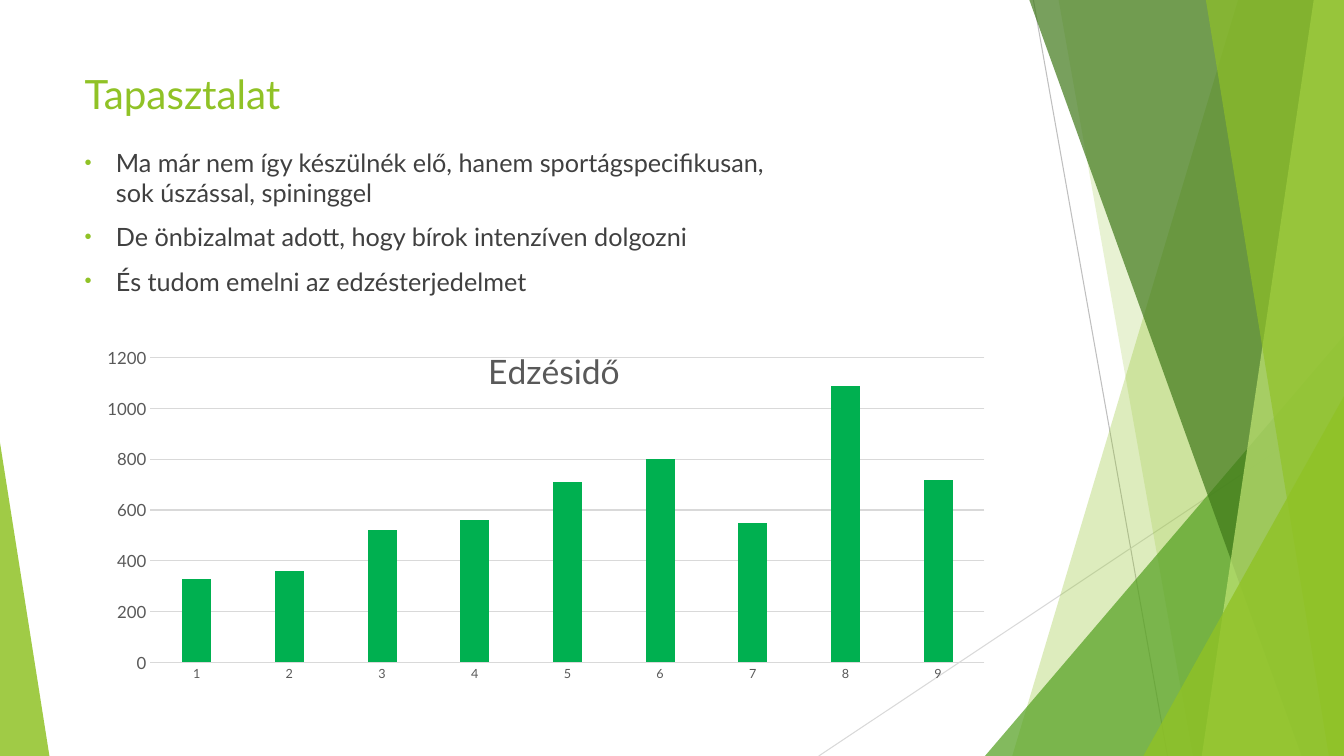
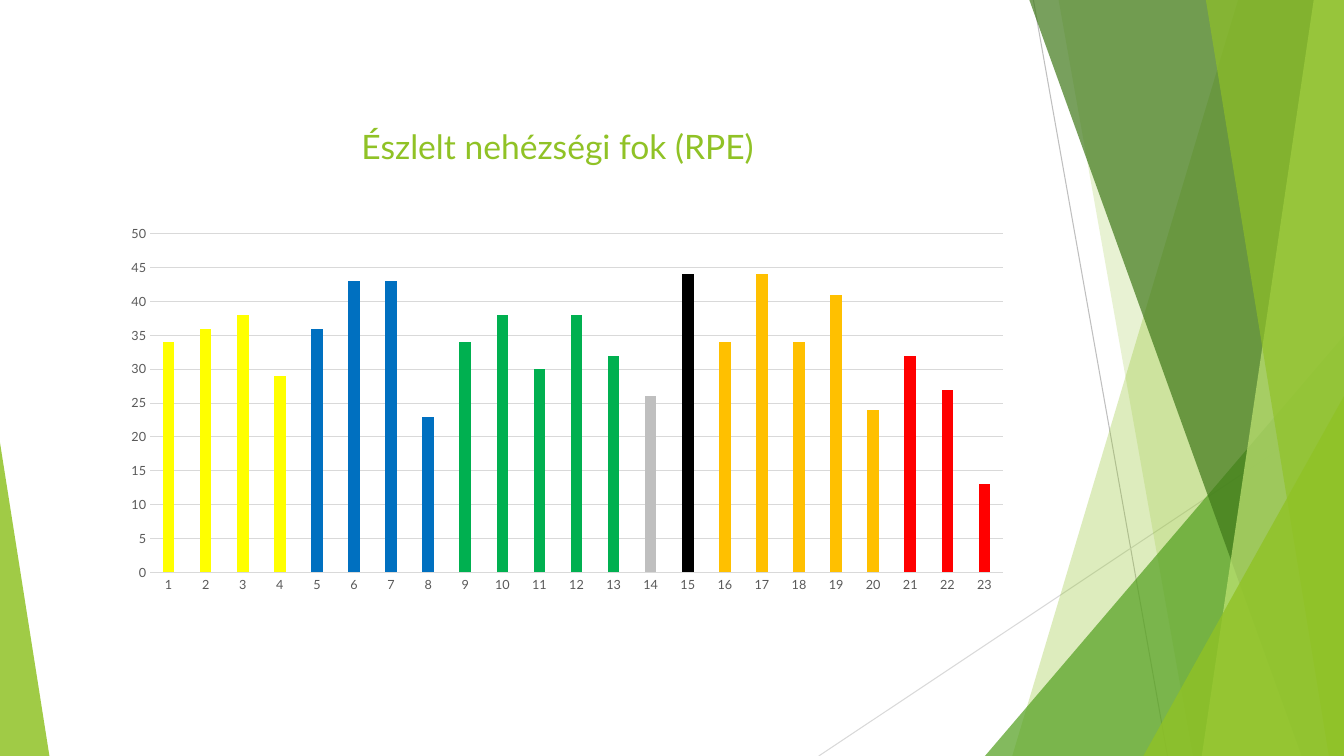
import itertools

import pptx
import pptx.chart.data
import pptx.dml.color
import pptx.enum.chart
import pptx.enum.shapes
import pptx.enum.text
import pptx.util
from lxml import etree
from pptx.oxml.ns import qn

WIDTH = pptx.util.Inches(13.33)
HEIGHT = pptx.util.Inches(7.5)
TITLE_AND_CONTENT, TITLE_ONLY = 1, 5
LIME = "90C226"
LEFT = pptx.enum.text.PP_ALIGN.LEFT
CENTER = pptx.enum.text.PP_ALIGN.CENTER


def across(share):
    """Length of a percentage of the slide's width."""
    return round(WIDTH * share / 100)


def down(share):
    """Length of a percentage of the slide's height."""
    return round(HEIGHT * share / 100)


def paint(fill, colour):
    fill.solid()
    fill.fore_color.rgb = pptx.dml.color.RGBColor.from_string(colour)


def add_xml(parent, tag, **attributes):
    return etree.SubElement(parent, qn(tag), attributes)


class Deck:
    """Green faceted style; places are left, top, width, height in percent."""

    font = "Lato"
    body_colour = "404040"
    label_colour = "595959"
    rule_colour = "D9D9D9"

    def __init__(self):
        self.file = pptx.Presentation()
        self.file.slide_width = WIDTH
        self.file.slide_height = HEIGHT
        self.page = None

    def new_page(self, layout):
        self.page = self.file.slides.add_slide(self.file.slide_layouts[layout])

    def style_font(self, font, size, colour):
        font.name = self.font
        font.size = pptx.util.Pt(size)
        paint(font.fill, colour)

    def place(self, box, left, top, width, height):
        box.left, box.top = across(left), down(top)
        box.width, box.height = across(width), down(height)

    # Shared background

    def to_master(self, shape):
        """Move a shape from the current slide to the slide master."""
        tree = self.file.slide_master.shapes.element
        shape.element.xpath(".//p:cNvPr")[0].set("id", str(100 + len(tree)))
        tree.append(shape.element)

    def facet(self, shape, colour, opacity):
        shape.shadow.inherit = False
        shape.line.fill.background()
        paint(shape.fill, colour)
        tint = shape.element.xpath("./p:spPr/a:solidFill/a:srgbClr")[0]
        add_xml(tint, "a:alpha", val=str(opacity * 1000))
        self.to_master(shape)

    def panel(self, top_x, bottom_x, colour, opacity):
        """Full-height facet from a slanted edge to the right side."""
        outline = self.page.shapes.build_freeform(across(top_x), 0)
        corners = [(WIDTH, 0), (WIDTH, HEIGHT), (across(bottom_x), HEIGHT)]
        outline.add_line_segments(corners, close=True)
        self.facet(outline.convert_to_shape(), colour, opacity)

    def wedge(self, left, top, width, apex, colour, opacity):
        """Triangle standing on the bottom edge; apex runs from 0 to 1."""
        shape = self.page.shapes.add_shape(
            pptx.enum.shapes.MSO_SHAPE.ISOSCELES_TRIANGLE,
            across(left), down(top), across(width), down(100 - top))
        shape.adjustments[0] = apex
        self.facet(shape, colour, opacity)

    def hairline(self, start, end, colour):
        line = self.page.shapes.add_connector(
            pptx.enum.shapes.MSO_CONNECTOR.STRAIGHT,
            across(start[0]), down(start[1]), across(end[0]), down(end[1]))
        line.line.width = pptx.util.Pt(0.75)
        paint(line.line.fill, colour)
        add_xml(line.element.spPr, "a:effectLst")
        self.to_master(line)

    def background(self):
        self.hairline((76.89, 0), (86.87, 100), "BFBFBF")
        self.hairline((100, 53.73), (60.92, 100), self.rule_colour)
        self.panel(92.12, 75.32, LIME, 30)
        self.panel(78.77, 88.75, LIME, 20)
        self.wedge(73.29, 44.4, 26.71, 1, "54A021", 72)
        self.panel(76.59, 96.85, "3F7819", 70)
        self.panel(97.75, 89.42, "C0E474", 70)
        self.panel(89.72, 98.87, LIME, 65)
        self.wedge(85.07, 52.4, 14.93, 1, LIME, 80)
        self.wedge(0, 58.53, 3.68, 0, LIME, 85)

    # Content

    def title(self, text, place, size, align=LEFT):
        box = self.page.shapes.title
        self.place(box, *place)
        frame = box.text_frame
        frame.text = text
        frame.auto_size = pptx.enum.text.MSO_AUTO_SIZE.NONE
        frame.vertical_anchor = pptx.enum.text.MSO_ANCHOR.BOTTOM
        paragraph = frame.paragraphs[0]
        paragraph.alignment = align
        self.style_font(paragraph.runs[0].font, size, LIME)

    def bullets(self, lines, place, size):
        box = self.page.placeholders[1]
        self.place(box, *place)
        frame = box.text_frame
        frame.text = "\n".join(lines)
        frame.auto_size = pptx.enum.text.MSO_AUTO_SIZE.NONE
        for paragraph in frame.paragraphs:
            paragraph.space_before = pptx.util.Pt(10)
            self.style_font(paragraph.runs[0].font, size, self.body_colour)
        indent = pptx.util.Inches(0.31)
        for properties in box.element.xpath(".//a:pPr"):
            properties.set("marL", str(indent))
            properties.set("indent", str(-indent))
            add_xml(add_xml(properties, "a:buClr"), "a:srgbClr", val=LIME)
            add_xml(properties, "a:buSzPct", val="80000")
            add_xml(properties, "a:buFont", typeface="Arial")
            add_xml(properties, "a:buChar", char="•")

    def layout(self, parent, inner=False, **shares):
        """Fix a chart part at shares (x, y, w, h) of the chart."""
        frame = parent.find(qn("c:layout"))
        if frame is None:
            frame = etree.Element(qn("c:layout"))
            parent.insert(0, frame)
        manual = add_xml(frame, "c:manualLayout")
        if inner:
            add_xml(manual, "c:layoutTarget", val="inner")
        for side in "xy":
            add_xml(manual, f"c:{side}Mode", val="edge")
        for side, share in shares.items():
            add_xml(manual, f"c:{side}", val=str(share))

    def axis(self, axis, size):
        axis.major_tick_mark = pptx.enum.chart.XL_TICK_MARK.NONE
        axis.minor_tick_mark = pptx.enum.chart.XL_TICK_MARK.NONE
        self.style_font(axis.tick_labels.font, size, self.label_colour)

    def rule(self, line):
        line.width = pptx.util.Pt(0.75)
        paint(line.fill, self.rule_colour)

    def columns(self, values, colours, place, plot_area, top, step,
                value_size=9):
        """Column chart with one colour for each value."""
        data = pptx.chart.data.CategoryChartData()
        data.categories = [str(n + 1) for n in range(len(values))]
        data.add_series("Series 1", values)
        left, upper, width, height = place
        chart = self.page.shapes.add_chart(
            pptx.enum.chart.XL_CHART_TYPE.COLUMN_CLUSTERED,
            across(left), down(upper), across(width), down(height), data).chart
        chart.has_legend = chart.has_title = False
        self.style_font(chart.font, 10, "000000")

        plot = chart.plots[0]
        plot.vary_by_categories = False
        plot.gap_width, plot.overlap = 219, -27
        series = plot.series[0]
        paint(series.format.fill, colours[0])
        for index, colour in enumerate(colours):
            if colour != colours[0]:
                paint(series.points[index].format.fill, colour)

        self.axis(chart.category_axis, 9)
        self.rule(chart.category_axis.format.line)
        scale = chart.value_axis
        self.axis(scale, value_size)
        scale.minimum_scale, scale.maximum_scale = 0, top
        scale.major_unit = step
        scale.format.line.fill.background()
        self.rule(scale.major_gridlines.format.line)
        self.layout(chart.element.xpath(".//c:plotArea")[0], True, **plot_area)
        return chart

    def chart_title(self, chart, text, size, **corner):
        chart.has_title = True
        frame = chart.chart_title.text_frame
        frame.text = text
        font = frame.paragraphs[0].runs[0].font
        self.style_font(font, size, self.label_colour)
        font.bold = False
        self.layout(chart.element.xpath("./c:chart/c:title")[0], **corner)


def experience(deck):
    deck.title("Tapasztalat", (5.55, 8, 70.52, 8.27), 28.8)
    deck.bullets(
        ["Ma már nem így készülnék elő, hanem sportágspecifikusan, "
         "sok úszással, spininggel",
         "De önbizalmat adott, hogy bírok intenzíven dolgozni",
         "És tudom emelni az edzésterjedelmet"],
        (5.55, 18.8, 53.56, 21.33), 18)
    minutes = [330, 360, 520, 560, 710, 800, 550, 1090, 720]
    chart = deck.columns(
        minutes, ["00B050"] * len(minutes), (5.55, 42.27, 70.52, 56),
        dict(x=0.08, y=0.09, w=0.88, h=0.72), 1200, 200, value_size=12)
    deck.chart_title(chart, "Edzésidő", 24, x=0.43, y=0.05)


def perceived_effort(deck):
    deck.title("Észlelt nehézségi fok (RPE)", (6.23, 14.4, 70.52, 8.27), 24,
               CENTER)
    weeks = [
        ("FFFF00", [34, 36, 38, 29]),
        ("0070C0", [36, 43, 43, 23]),
        ("00B050", [34, 38, 30, 38, 32]),
        ("BFBFBF", [26]),
        ("000000", [44]),
        ("FFC000", [34, 44, 34, 41, 24]),
        ("FF0000", [32, 27, 13]),
    ]
    values = list(itertools.chain.from_iterable(week for _, week in weeks))
    colours = [colour for colour, week in weeks for _ in week]
    deck.columns(values, colours, (6.23, 25.33, 70.52, 56),
                 dict(x=0.07, y=0.1, w=0.9, h=0.8), 50, 5)


def main():
    deck = Deck()
    deck.new_page(TITLE_AND_CONTENT)
    deck.background()
    experience(deck)
    deck.new_page(TITLE_ONLY)
    perceived_effort(deck)
    deck.file.save("out.pptx")


if __name__ == "__main__":
    main()
